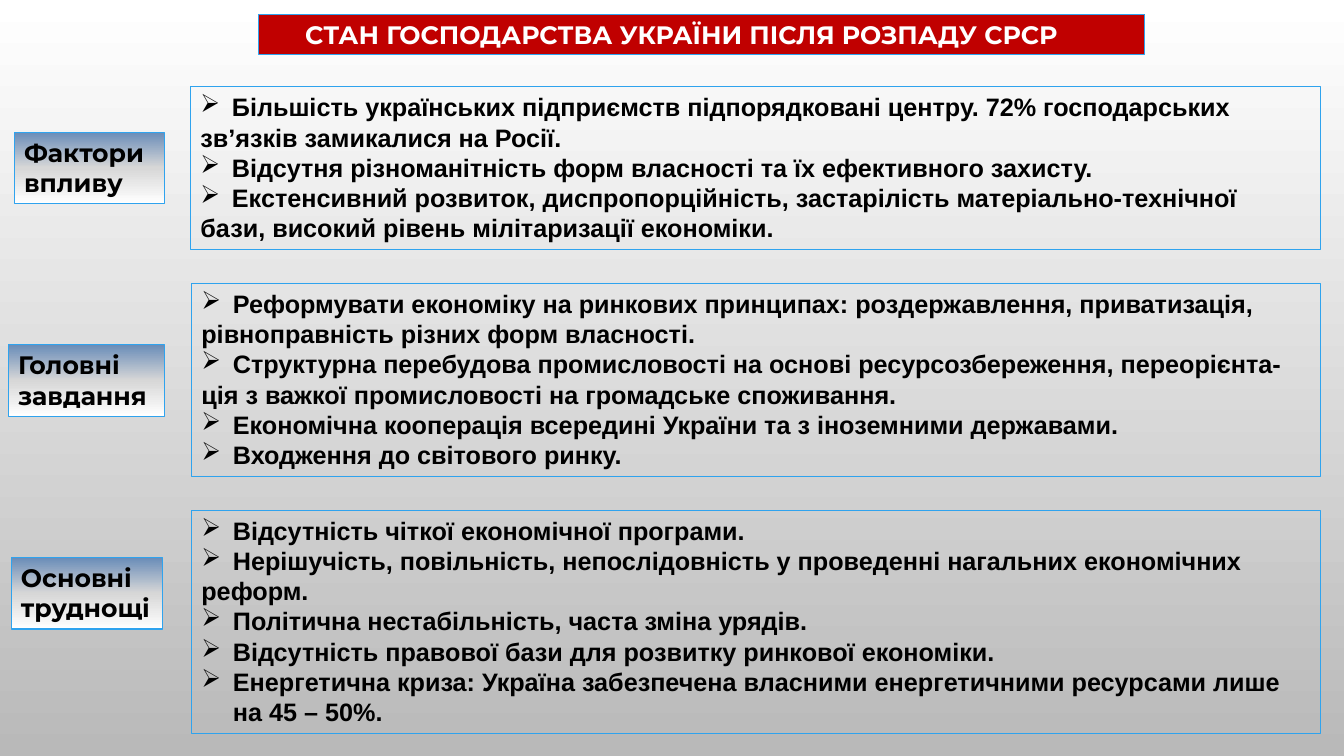
from copy import deepcopy
from pptx import Presentation
from pptx.dml.color import RGBColor as Rgb
from pptx.oxml.ns import qn
from pptx.oxml.xmlchemy import OxmlElement as Elem
from pptx.util import Pt

EDGE = "2FA3EE"
FADE = ["698CB8", "D7D7D7", "FFFFFF"]
TITLE = "СТАН ГОСПОДАРСТВА УКРАЇНИ ПІСЛЯ РОЗПАДУ СРСР"
BANDS = [
    ((10.1, 94.3, 107.3, 51.1), "Фактори\nвпливу",
     (136.1, 61.9, 807.1, 116.6), [
        "Більшість українських підприємств підпорядковані центру. 72% господарських\n"
        "зв’язків замикалися на Росії.",
        "Відсутня різноманітність форм власності та їх ефективного захисту.",
        "Екстенсивний розвиток, диспропорційність, застарілість матеріально-технічної\n"
        "бази, високий рівень мілітаризації економіки."]),
    ((5.8, 246.2, 111.6, 51.1), "Головні\nзавдання",
     (136.8, 202.3, 806.4, 138.2), [
        "Реформувати економіку на ринкових принципах: роздержавлення, приватизація,\n"
        "рівноправність різних форм власності.",
        "Структурна перебудова промисловості на основі ресурсозбереження, переорієнта-\n"
        "ція з важкої промисловості на громадське споживання.",
        "Економічна кооперація всередині України та з іноземними державами.",
        "Входження до світового ринку."]),
    ((7.9, 398.2, 108, 51.1), "Основні\nтруднощі",
     (136.8, 364.3, 806.4, 159.8), [
        "Відсутність чіткої економічної програми.",
        "Нерішучість, повільність, непослідовність у проведенні нагальних економічних\n"
        "реформ.",
        "Політична нестабільність, часта зміна урядів.",
        "Відсутність правової бази для розвитку ринкової економіки.",
        "Енергетична криза: Україна забезпечена власними енергетичними ресурсами "
        "лише на 45 – 50%."]),
]


def color(code):
    """Turn a hex string into a colour."""
    return Rgb.from_string(code)


def fade(fill, root, codes):
    """Fill from top to bottom with evenly spaced colours."""
    fill.gradient()
    fill.gradient_angle = 270
    group = next(root.iter(qn("a:gsLst")))
    for _ in codes[2:]:
        group.append(deepcopy(group[-1]))
    for i, (stop, code) in enumerate(zip(fill.gradient_stops, codes)):
        stop.color.rgb = color(code)
        stop.position = i / (len(codes) - 1)


def frame(slide, box, wrap=True):
    """Add an outlined text box."""
    shape = slide.shapes.add_textbox(*map(Pt, box))
    shape.line.color.rgb = color(EDGE)
    shape.line.width = Pt(0.75)
    shape.text_frame.word_wrap = wrap
    return shape


def style(para, face, code="000000"):
    """Set the bold font of a paragraph."""
    font = para.font
    font.name, font.size, font.bold = face, Pt(18), True
    font.color.rgb = color(code)


def bullet(para):
    """Give a paragraph an arrow bullet with a hanging indent."""
    props = para._p.get_or_add_pPr()
    props.set("marL", str(Pt(22.5)))
    props.set("indent", str(-Pt(22.5)))
    mark = Elem("a:buChar")
    mark.set("char", "➢")
    props.append(mark)


def title(slide, box):
    """Draw the red heading bar."""
    shape = frame(slide, box)
    shape.fill.solid()
    shape.fill.fore_color.rgb = color("C00000")
    body = shape.text_frame
    body.margin_left = Pt(33)
    body.text = TITLE
    style(body.paragraphs[0], "Montserrat", "FFFFFF")


def label(slide, box, text):
    """Draw a shaded label of a band."""
    shape = frame(slide, box, False)
    fade(shape.fill, shape.element, FADE)
    shape.text_frame.text = text
    for para in shape.text_frame.paragraphs:
        style(para, "Montserrat")


def points(slide, box, items):
    """Draw a box of bulleted points, with flush follow-on lines."""
    body = frame(slide, box).text_frame
    body.text = "\n".join(items)
    paras = iter(body.paragraphs)
    for item in items:
        for i, _ in enumerate(item.split("\n")):
            para = next(paras)
            if i == 0:
                bullet(para)
            style(para, "Arial")


def main():
    """Build and save the slide."""
    deck = Presentation()
    deck.slide_width, deck.slide_height = Pt(960), Pt(540)
    slide = deck.slides.add_slide(deck.slide_layouts[6])
    fade(slide.background.fill, slide.element, ["FFFFFF", "B9B9B9"])
    title(slide, (185, 10.1, 632.9, 28.8))
    for side, name, area, items in BANDS:
        label(slide, side, name)
        points(slide, area, items)
    deck.save("out.pptx")


if __name__ == "__main__":
    main()
